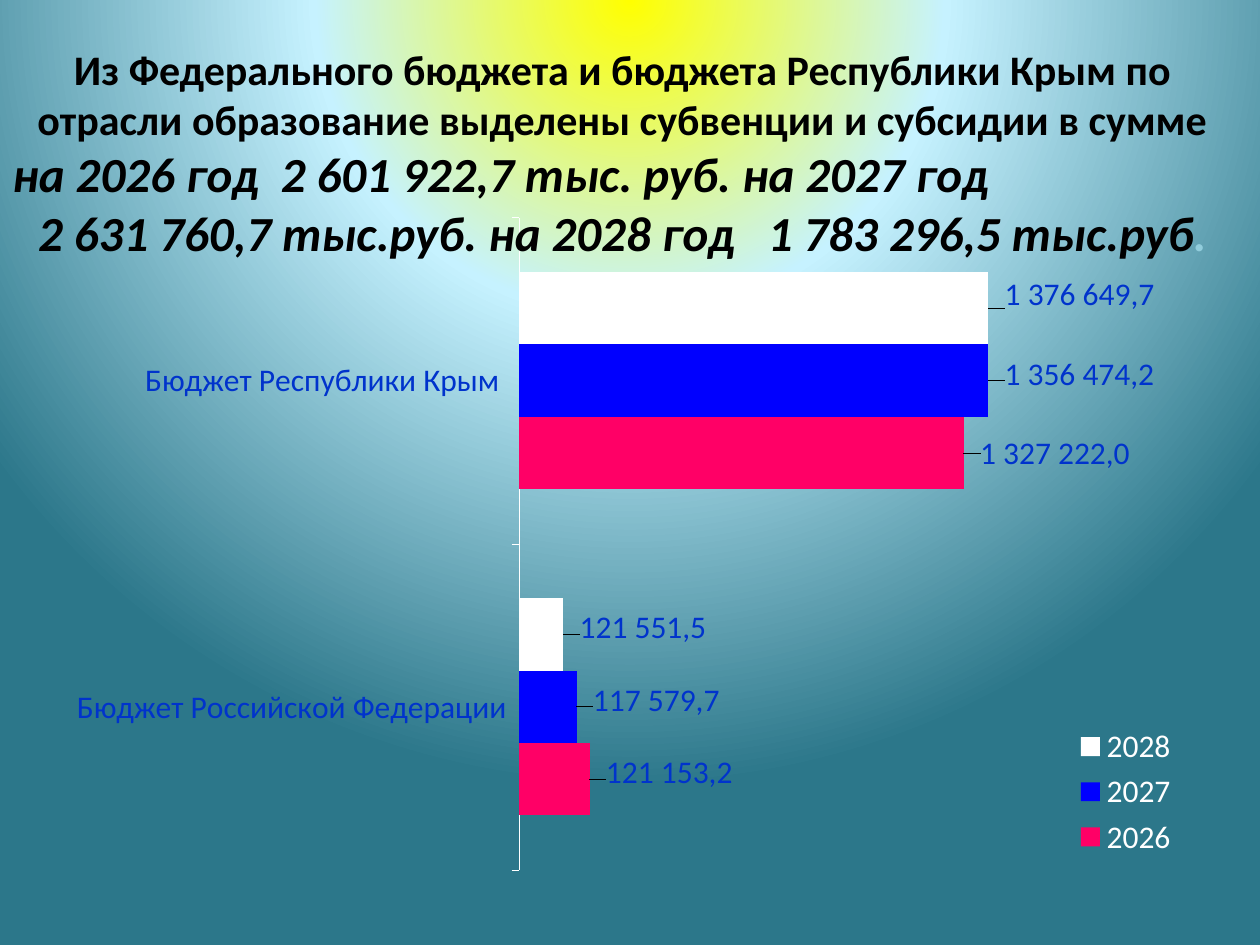
import pptx
import pptx.chart.data
import pptx.dml.color
import pptx.enum.chart
import pptx.enum.text
import pptx.oxml
import pptx.oxml.ns
import pptx.util

RGBColor = pptx.dml.color.RGBColor
BLACK = RGBColor(0x00, 0x00, 0x00)
WHITE = RGBColor(0xFF, 0xFF, 0xFF)
PINK = RGBColor(0xFF, 0x00, 0x66)
BLUE = RGBColor(0x00, 0x00, 0xFF)
LABEL_BLUE = RGBColor(0x00, 0x33, 0xCC)
PALE_BLUE = RGBColor(0x92, 0xCD, 0xDC)
YELLOW = RGBColor(0xFF, 0xFF, 0x00)
SKY = RGBColor(0xC6, 0xF2, 0xFF)
TEAL = RGBColor(0x2C, 0x77, 0x8A)

WIDTH = pptx.util.Inches(10)
HEIGHT = pptx.util.Inches(7.5)
NAMESPACES = pptx.oxml.ns.nsdecls("p", "a")
CHART_NAMESPACE = pptx.oxml.ns.nsdecls("c")

BUDGETS = ["Бюджет Российской Федерации", "Бюджет Республики Крым "]
YEARS = [
    ("2026", PINK, (270876.1, 1705401.2),
     [("121 153,2", 0.01, -0.01), ("1 327 222,0", 0.01, 0)]),
    ("2027", BLUE, (221129.9, 1799172.7),
     [("117 579,7", 0.01, -0.01), ("1 356 474,2", 0.01, -0.01)]),
    ("2028", WHITE, (170000, 1800000),
     [("121 551,5", 0.01, -0.01), ("1 376 649,7", 0.01, -0.02)]),
]


def area(left, top, width, height):
    return [round(share * side) for share, side in
            zip((left, top, width, height), (WIDTH, HEIGHT) * 2)]


def style_font(font, size=18, color=WHITE, bold=False, italic=False):
    font.name = "Calibri"
    font.size = pptx.util.Pt(size)
    font.color.rgb = color
    font.bold = bold
    font.italic = italic


def add_text(paragraph, text, **style):
    run = paragraph.add_run()
    run.text = text
    style_font(run.font, **style)


def paint_background(slide, stops):
    colors = "".join(
        f'<a:gs pos="{percent * 1000}"><a:srgbClr val="{color}"/></a:gs>'
        for percent, color in stops)
    slide._element.cSld.insert(0, pptx.oxml.parse_xml(
        f'<p:bg {NAMESPACES}><p:bgPr><a:gradFill rotWithShape="1">'
        f'<a:gsLst>{colors}</a:gsLst><a:path path="circle">'
        '<a:fillToRect l="50000" t="-80000" r="50000" b="180000"/></a:path>'
        '</a:gradFill><a:effectLst/></p:bgPr></p:bg>'))


def manual_layout(**settings):
    entries = "".join(f'<c:{key} val="{value}"/>'
                      for key, value in settings.items())
    return pptx.oxml.parse_xml(
        f'<c:layout {CHART_NAMESPACE}><c:manualLayout>{entries}'
        '</c:manualLayout></c:layout>')


def place(element, after, **settings):
    for old in element.findall(pptx.oxml.ns.qn("c:layout")):
        element.remove(old)
    layout = manual_layout(**settings)
    if after is None:
        element.insert(0, layout)
    else:
        element.find(pptx.oxml.ns.qn(after)).addnext(layout)


def hide_leader_lines(labels):
    labels._element.append(pptx.oxml.parse_xml(
        f'<c:extLst {CHART_NAMESPACE}>'
        '<c:ext uri="{CE6537A1-D6FC-4f65-9D91-7224C49458BB}" xmlns:c15='
        '"http://schemas.microsoft.com/office/drawing/2012/chart">'
        '<c15:showLeaderLines val="0"/></c:ext></c:extLst>'))


def label_point(point, text, right, down):
    label = point.data_label
    add_text(label.text_frame.paragraphs[0], text, color=LABEL_BLUE)
    label.position = pptx.enum.chart.XL_LABEL_POSITION.OUTSIDE_END
    place(label._dLbl, "c:idx", x=right, y=down)


def style_series(series, color, labels):
    series.format.fill.solid()
    series.format.fill.fore_color.rgb = color
    series.invert_if_negative = False
    series.data_labels.show_value = True
    series.data_labels.number_format = "#,##0.00"
    series.data_labels.number_format_is_linked = False
    style_font(series.data_labels.font, color=LABEL_BLUE)
    for index, label in enumerate(labels):
        label_point(series.points[index], *label)
    hide_leader_lines(series.data_labels)


def style_axes(chart):
    budgets = chart.category_axis
    style_font(budgets.tick_labels.font, color=LABEL_BLUE)
    budgets.major_tick_mark = pptx.enum.chart.XL_TICK_MARK.OUTSIDE
    budgets.format.line.color.rgb = WHITE
    budgets.format.line.width = pptx.util.Pt(0.25)
    amounts = chart.value_axis
    amounts.visible = False
    amounts.has_major_gridlines = False
    amounts.minimum_scale = 0
    amounts.maximum_scale = 2000000
    amounts.tick_labels.number_format = "#,##0.00"
    amounts.tick_labels.number_format_is_linked = False


def add_budget_chart(slide):
    data = pptx.chart.data.CategoryChartData(number_format="#,##0.00")
    data.categories = BUDGETS
    for year, _, amounts, _ in YEARS:
        data.add_series(year, amounts)
    chart = slide.shapes.add_chart(
        pptx.enum.chart.XL_CHART_TYPE.BAR_CLUSTERED,
        *area(0.043, 0.216, 0.9, 0.719), data).chart
    chart.has_title = False
    style_font(chart.font)
    plot = chart.plots[0]
    plot.gap_width = 150
    plot.overlap = 0
    plot.vary_by_categories = False
    for series, (_, color, _, labels) in zip(plot.series, YEARS):
        style_series(series, color, labels)
    style_axes(chart)
    chart.has_legend = True
    chart.legend.position = pptx.enum.chart.XL_LEGEND_POSITION.RIGHT
    chart.legend.include_in_layout = False
    style_font(chart.legend.font)
    place(chart.legend._element, "c:legendPos", xMode="edge", yMode="edge",
          x=0.9, y=0.76, w=0.09, h=0.21)
    place(chart._chartSpace.chart.plotArea, None, layoutTarget="inner",
          xMode="edge", yMode="edge", x=0.41, y=0.02, w=0.46, h=0.96)


def add_heading(slide):
    heading = slide.shapes.add_textbox(*area(0, 0.039, 0.988, 0.247))
    frame = heading.text_frame
    frame.word_wrap = True
    frame.auto_size = pptx.enum.text.MSO_AUTO_SIZE.SHAPE_TO_FIT_TEXT
    purpose, first_sum, later_sums = (
        frame.paragraphs[0], frame.add_paragraph(), frame.add_paragraph())
    purpose.alignment = later_sums.alignment = pptx.enum.text.PP_ALIGN.CENTER
    first_sum.alignment = pptx.enum.text.PP_ALIGN.LEFT
    add_text(purpose, "Из Федерального бюджета и бюджета Республики Крым по "
             "отрасли образование выделены субвенции и субсидии в сумме",
             size=24, color=BLACK, bold=True)
    sums = dict(size=28, bold=True, italic=True)
    add_text(first_sum, "на 2026 год  2 601 922,7 тыс. руб. на 2027 год",
             color=BLACK, **sums)
    add_text(later_sums, "2 631 760,7 тыс.руб. на 2028 год   "
             "1 783 296,5 тыс.руб", color=BLACK, **sums)
    add_text(later_sums, ".", color=PALE_BLUE, **sums)


def main():
    presentation = pptx.Presentation()
    presentation.slide_width = WIDTH
    presentation.slide_height = HEIGHT
    slide = presentation.slides.add_slide(presentation.slide_layouts[6])
    paint_background(slide, [(0, YELLOW), (40, SKY), (100, TEAL)])
    add_budget_chart(slide)
    add_heading(slide)
    presentation.save("out.pptx")


if __name__ == "__main__":
    main()
